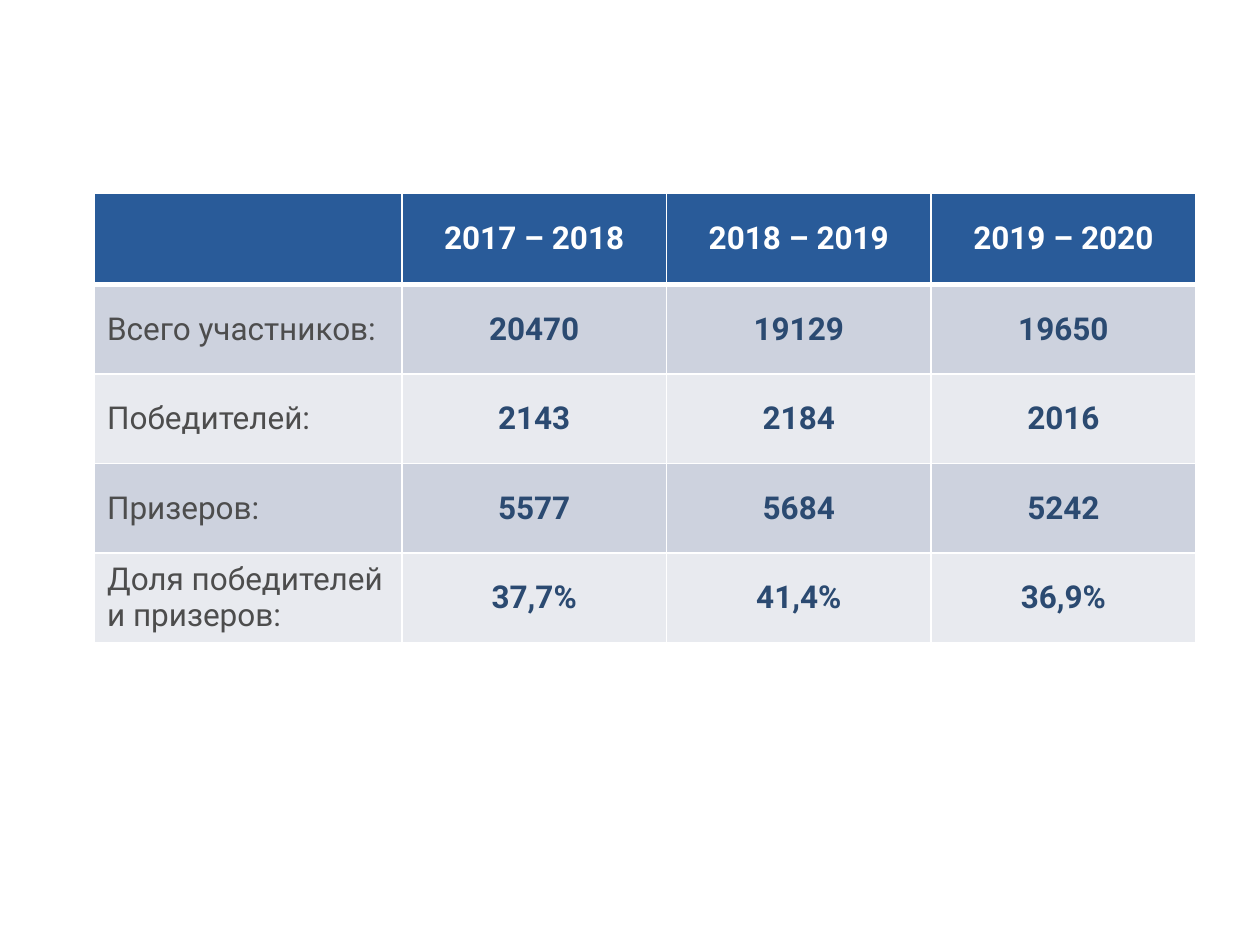
from dataclasses import dataclass

from lxml import etree
from pptx import Presentation
from pptx.dml.color import RGBColor
from pptx.enum.text import MSO_ANCHOR, PP_ALIGN
from pptx.oxml.ns import qn
from pptx.util import Inches, Pt

LEFT, CENTER = PP_ALIGN.LEFT, PP_ALIGN.CENTER
MIDDLE = MSO_ANCHOR.MIDDLE

FONT = "Roboto"
WHITE, BLUE, NAVY, GRAY = "FFFFFF", "295B99", "2B4A71", "4D4D4D"
BANDS = ("CDD2DE", "E8EAEF")
THIN, THICK = 1, 3
WIDTHS = (2.44, 2.1, 2.1, 2.1)
HEIGHTS = (0.73, 0.71, 0.71, 0.71, 0.71)


@dataclass
class Row:
    label: str
    values: tuple[str, ...]


ROWS = (
    Row("", ("2017 – 2018", "2018 – 2019", "2019 – 2020")),
    Row("Всего участников:", ("20470", "19129", "19650")),
    Row("Победителей:", ("2143", "2184", "2016")),
    Row("Призеров:", ("5577", "5684", "5242")),
    Row("Доля победителей и призеров:", ("37,7%", "41,4%", "36,9%")),
)


def color(code: str) -> RGBColor:
    return RGBColor.from_string(code)


def add_edges(cell, top: float, bottom: float) -> None:
    """Draw white cell borders; call before the fill, which must follow them."""
    props = cell._tc.get_or_add_tcPr()
    for side, width in (("L", THIN), ("R", THIN), ("T", top), ("B", bottom)):
        line = etree.SubElement(props, qn(f"a:ln{side}"), w=str(Pt(width)))
        fill = etree.SubElement(line, qn("a:solidFill"))
        etree.SubElement(fill, qn("a:srgbClr"), val=WHITE)


def write(cell, text: str, *, ink: str, bold: bool = True, align=CENTER) -> None:
    cell.vertical_anchor = MIDDLE
    para = cell.text_frame.paragraphs[0]
    para.alignment = align
    para.font.size = Pt(18)
    if text:
        run = para.add_run()
        run.text = text
        font = run.font
        font.name, font.size, font.bold = FONT, Pt(18), bold
        font.color.rgb = color(ink)


def fill_row(table, index: int, row: Row) -> None:
    head = index == 0
    back = BLUE if head else BANDS[(index - 1) % 2]
    top = THICK if index == 1 else THIN
    bottom = THICK if head else THIN
    for col, text in enumerate((row.label, *row.values)):
        cell = table.cell(index, col)
        add_edges(cell, top, bottom)
        cell.fill.solid()
        cell.fill.fore_color.rgb = color(back)
        if col == 0:
            write(cell, text, ink=GRAY, bold=False, align=LEFT)
        else:
            write(cell, text, ink=WHITE if head else NAVY)


def main() -> None:
    deck = Presentation()
    deck.slide_width, deck.slide_height = Inches(10), Inches(7.5)
    slide = deck.slides.add_slide(deck.slide_layouts[6])
    table = slide.shapes.add_table(
        len(ROWS), len(WIDTHS), Inches(0.75), Inches(1.53),
        Inches(sum(WIDTHS)), Inches(sum(HEIGHTS)),
    ).table
    for col, width in zip(table.columns, WIDTHS):
        col.width = Inches(width)
    for line, height in zip(table.rows, HEIGHTS):
        line.height = Inches(height)
    for index, row in enumerate(ROWS):
        fill_row(table, index, row)
    deck.save("out.pptx")


if __name__ == "__main__":
    main()
